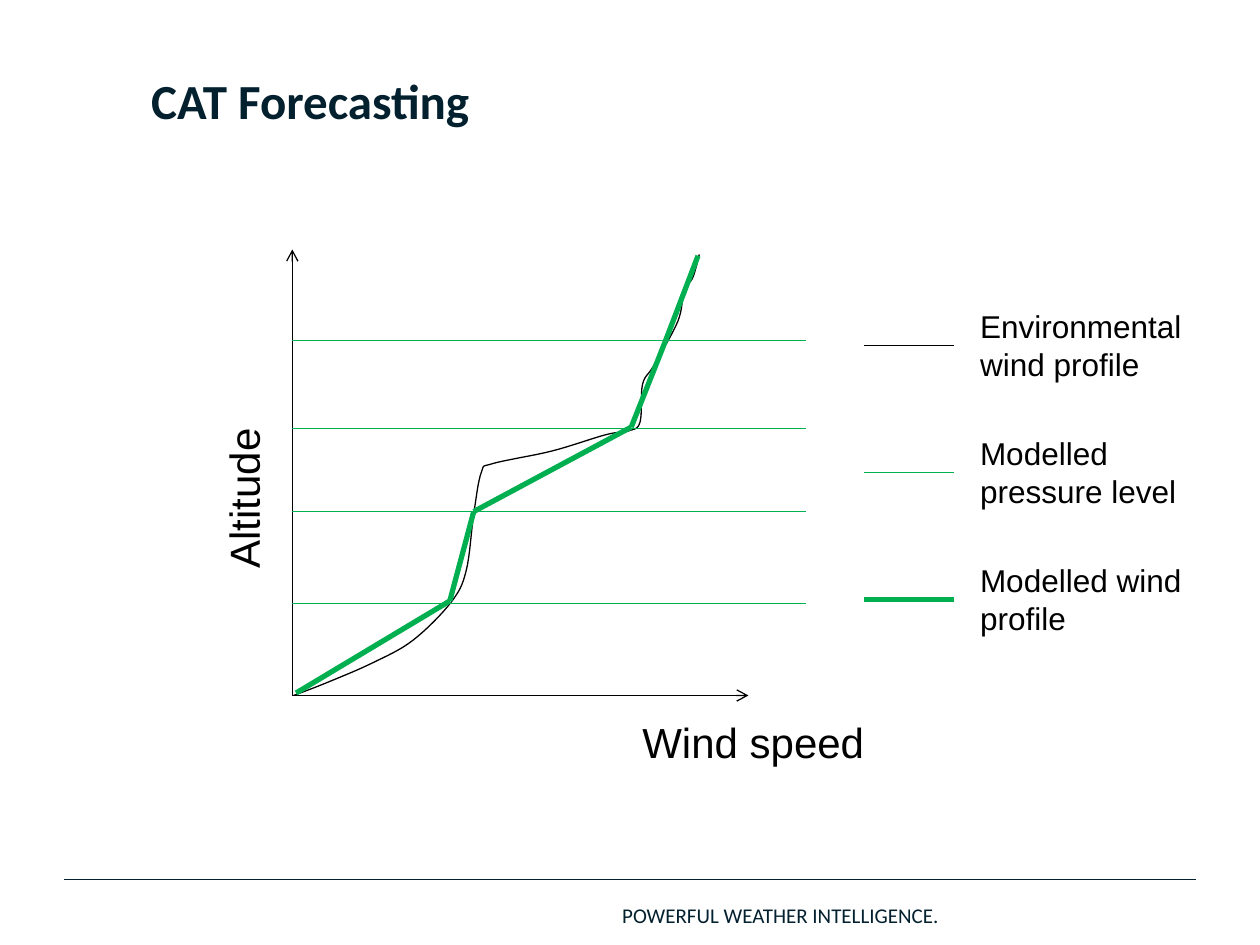
from dataclasses import dataclass
from itertools import pairwise

from lxml.etree import SubElement
from pptx import Presentation
from pptx.dml.color import RGBColor
from pptx.enum.shapes import MSO_CONNECTOR
from pptx.enum.text import MSO_ANCHOR, MSO_AUTO_SIZE, PP_ALIGN
from pptx.oxml.ns import qn
from pptx.util import Inches, Pt


@dataclass(frozen=True)
class Theme:
    navy: RGBColor = RGBColor(0x03, 0x20, 0x2F)
    black: RGBColor = RGBColor(0, 0, 0)
    green: RGBColor = RGBColor(0x00, 0xB0, 0x50)
    heading_font: str = "Calibri"
    label_font: str = "Arial"
    title_size: int = 28
    axis_size: int = 24
    legend_size: int = 18
    footer_size: int = 12
    thin: float = 0.75
    thick: float = 3


theme = Theme()


def write_text(shape, text, *, size, font=theme.label_font, color=theme.black,
               bold=False, anchor=MSO_ANCHOR.TOP, fit=MSO_AUTO_SIZE.SHAPE_TO_FIT_TEXT):
    frame = shape.text_frame
    frame.word_wrap = True
    frame.auto_size = fit
    frame.vertical_anchor = anchor
    paragraph = frame.paragraphs[0]
    paragraph.alignment = PP_ALIGN.LEFT
    run = paragraph.add_run()
    run.text = text
    run.font.size = Pt(size)
    run.font.name = font
    run.font.bold = bold
    run.font.color.rgb = color


def draw_line(start, end, color, width=theme.thin, arrow=False):
    ends = [Inches(value) for value in (*start, *end)]
    line = slide.shapes.add_connector(MSO_CONNECTOR.STRAIGHT, *ends)
    line.line.color.rgb = color
    line.line.width = Pt(width)
    if arrow:
        SubElement(line.line._get_or_add_ln(), qn("a:tailEnd"), type="arrow")
    SubElement(line._element.spPr, qn("a:effectLst"))


presentation = Presentation()
presentation.slide_width = Inches(10)
presentation.slide_height = Inches(7.5)
slide = presentation.slides.add_slide(presentation.slide_layouts[5])

margin, footer_y = 0.51, 6.98
draw_line((margin, footer_y), (10 - margin, footer_y), theme.navy)
tagline = slide.shapes.add_textbox(Inches(4.84), Inches(7.06), Inches(2.83), Inches(0.4))
write_text(tagline, "POWERFUL WEATHER INTELLIGENCE.", size=theme.footer_size,
           font=theme.heading_font, color=theme.navy, anchor=MSO_ANCHOR.MIDDLE,
           fit=MSO_AUTO_SIZE.NONE)

title = slide.shapes.title
title.left, title.top = Inches(1.1), Inches(0.36)
title.width, title.height = Inches(7.84), Inches(0.87)
write_text(title, "CAT Forecasting", size=theme.title_size, font=theme.heading_font,
           color=theme.navy, bold=True, anchor=MSO_ANCHOR.MIDDLE, fit=MSO_AUTO_SIZE.NONE)

origin_x, origin_y = 2.32, 5.52
altitude_top, speed_right = 1.98, 5.94
for axis_end in ((origin_x, altitude_top), (speed_right, origin_y)):
    draw_line((origin_x, origin_y), axis_end, theme.black, arrow=True)

for axis_name, left, top, rotation in (("Wind speed", 5, 5.64, 0), ("Altitude", 0.75, 3.18, 270)):
    axis_label = slide.shapes.add_textbox(Inches(left), Inches(top), Inches(2.36), Inches(0.5))
    axis_label.rotation = rotation
    write_text(axis_label, axis_name, size=theme.axis_size)

surface_layer = [(2.33, 5.52), (2.59, 5.42), (2.96, 5.26), (3.28, 5.08), (3.58, 4.78)]
steady_layer = [(3.7, 4.53), (3.76, 4.08), (3.82, 3.75)]
shear_layer = [(3.91, 3.68), (4.38, 3.58), (4.81, 3.45), (4.99, 3.42)]
upper_layer = [(5.08, 3.35), (5.1, 3.05), (5.19, 2.9), (5.38, 2.55),
               (5.43, 2.31), (5.5, 2.2), (5.55, 2.02)]
bends = surface_layer + steady_layer + shear_layer + upper_layer

neighbours = list(zip([bends[0], *bends], [*bends[1:], bends[-1]]))
slopes = [((after[0] - before[0]) / 2, (after[1] - before[1]) / 2)
          for before, after in neighbours]

steps_per_bend = 8
environmental_profile = [bends[0]]
for (start, start_slope), (end, end_slope) in pairwise(zip(bends, slopes)):
    for step in range(1, steps_per_bend + 1):
        t = step / steps_per_bend
        end_weight = t * t * (3 - 2 * t)
        start_pull = t * (1 - t) ** 2
        end_pull = t * t * (t - 1)
        environmental_profile.append(tuple(
            start[axis] * (1 - end_weight) + end[axis] * end_weight
            + start_slope[axis] * start_pull + end_slope[axis] * end_pull
            for axis in (0, 1)))

profile_points = [(Inches(x), Inches(y)) for x, y in environmental_profile]
profile_builder = slide.shapes.build_freeform(*profile_points[0])
profile_builder.add_line_segments(profile_points[1:], close=False)
profile_curve = profile_builder.convert_to_shape()
profile_curve.shadow.inherit = False
profile_curve.fill.background()
profile_curve.line.color.rgb = theme.black
profile_curve.line.width = Pt(theme.thin)

level_right = 6.4
for pressure_level in (2.7, 3.4, 4.06, 4.79):
    draw_line((origin_x, pressure_level), (level_right, pressure_level), theme.green)

modelled_profile = [(2.35, 5.5), (3.57, 4.77), (3.76, 4.06), (5.01, 3.39), (5.28, 2.71), (5.54, 2.03)]
for start, end in pairwise(modelled_profile):
    draw_line(start, end, theme.green, theme.thick)

legend = (
    ("Environmental wind profile", theme.black, theme.thin),
    ("Modelled pressure level", theme.green, theme.thin),
    ("Modelled wind profile", theme.green, theme.thick),
)
legend_top, legend_pitch = 2.74, 1.01
key_left, key_right, entry_left = 6.86, 7.57, 7.68
entry_width, entry_height = 1.81, 0.71
for row, (entry, color, width) in enumerate(legend):
    key_y = legend_top + row * legend_pitch
    draw_line((key_left, key_y), (key_right, key_y), color, width)
    entry_label = slide.shapes.add_textbox(
        Inches(entry_left), Inches(key_y - entry_height / 2),
        Inches(entry_width), Inches(entry_height))
    write_text(entry_label, entry, size=theme.legend_size)

presentation.save("out.pptx")
